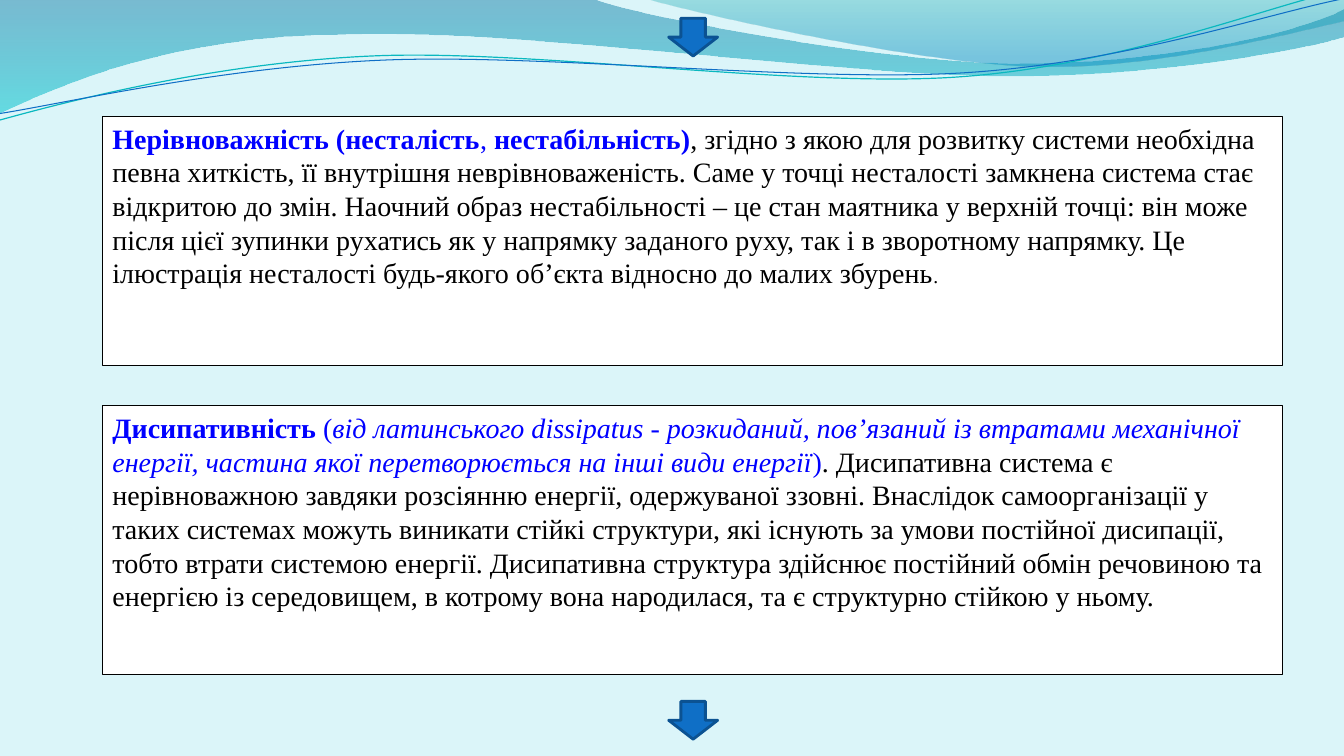
"""Build a slide on two system principles under a wave header."""
from pptx import Presentation, util as u
from pptx.dml.color import RGBColor
from pptx.enum import shapes as s, text as t
from lxml import etree

SKY = RGBColor(0xDB, 0xF5, 0xF9)
WHITE = RGBColor(255, 255, 255)
BLACK = RGBColor(0, 0, 0)
BLUE = RGBColor(0, 0, 255)
ROYAL = RGBColor(0x0F, 0x6F, 0xC6)
NAVY = RGBColor(0x0B, 0x52, 0x92)
AQUA = RGBColor(0x0A, 0xB8, 0xBF)
DEEP = RGBColor(0x00, 0x74, 0xA1)
CYAN = RGBColor(0x00, 0xC6, 0xCF)
TEAL = RGBColor(0x00, 0xA1, 0xA9)
AZURE = RGBColor(0x00, 0x8B, 0xBF)

deck = Presentation()
deck.slide_width, deck.slide_height = u.Pt(960), u.Pt(540)
slide = deck.slides.add_slide(deck.slide_layouts[6])
slide.background.fill.solid()
slide.background.fill.fore_color.rgb = SKY


def draw(start, parts, close):
    """Draw an outline whose parts are points or cubic curves."""
    dots = [(u.Pt(p[i]), u.Pt(p[i + 1]))
            for p in parts for i in range(0, len(p), 2)]
    pen = slide.shapes.build_freeform(u.Pt(start[0]), u.Pt(start[1]))
    pen.add_line_segments(dots, close=close)
    shape = pen.convert_to_shape()
    shape.shadow.inherit = False
    nodes = iter(shape._element.findall(".//{*}lnTo"))
    for part in parts:
        node = next(nodes)
        if len(part) == 6:
            node.tag = node.tag.replace("lnTo", "cubicBezTo")
            for i in range(2):
                extra = next(nodes)
                node.append(extra[0])
                extra.getparent().remove(extra)
    return shape


waves = [
    ((0, -1), [(423, -1), (456, 12, 637, 45, 728, 45),
               (820, 45, 920, 27, 960, 6.5), (961, 26),
               (944, 32, 835, 55, 716, 54), (597, 54, 366, 20, 247, 24.5),
               (123, 25, 44, 60, -1, 81)],
     [(0, DEEP, 45), (1, CYAN, 55)]),
    ((460, -1), [(489, 8, 654, 45, 738, 47), (822, 50, 923, 23, 960, 15),
                 (960, 0)],
     [(0, TEAL, 30), (0.8, AZURE, 45)]),
]
for start, parts, stops in waves:
    wave = draw(start, parts, True)
    wave.line.fill.background()
    wave.fill.gradient()
    wave.fill.gradient_angle = 270
    for stop, (place, color, alpha) in zip(wave.fill.gradient_stops, stops):
        stop.position = place
        stop.color.rgb = color
    nodes = wave._element.spPr.findall(".//{*}srgbClr")
    for node, (place, color, alpha) in zip(nodes, stops):
        tag = node.tag.replace("srgbClr", "alpha")
        etree.SubElement(node, tag).set("val", str(alpha * 1000))

curves = [
    ((-2.6, 63.4), [(45, 52.6, 152.2, 29.6, 266.3, 30),
                    (379.4, 30.3, 567.9, 67.2, 683.1, 64.7),
                    (798.4, 62.1, 902.2, 25.9, 959.8, 15.6)], AQUA, 0.85),
    ((-1.3, 58.4), [(44.2, 53.5, 157.3, 32.8, 272.4, 33.2),
                    (387.5, 33.6, 572.3, 63.4, 687.5, 61.8),
                    (802.7, 60.2, 905.3, 30, 961.7, 21.6)], ROYAL, 0.75),
]
for start, parts, color, width in curves:
    curve = draw(start, parts, False)
    curve.rotation = 357.3
    curve.fill.background()
    curve.line.color.rgb = color
    curve.line.width = u.Pt(width)


def add(kind, box, fill, line, width):
    """Add a filled preset shape."""
    shape = slide.shapes.add_shape(kind, *[u.Pt(n) for n in box])
    shape.shadow.inherit = False
    shape.fill.solid()
    shape.fill.fore_color.rgb = fill
    shape.line.color.rgb = line
    shape.line.width = u.Pt(width)
    return shape


cards = [
    (83, 178, [
        ("Нерівноважність (несталість", BLUE, True, False, 20),
        (", ", BLUE, False, False, 20),
        ("нестабільність)", BLUE, True, False, 20),
        (", згідно з якою для розвитку системи необхідна певна хиткість, "
         "її внутрішня неврівноваженість. Саме у точці несталості замкнена "
         "система стає відкритою до змін. Наочний образ нестабільності – це "
         "стан маятника у верхній точці: він може після цієї зупинки рухатись "
         "як у напрямку заданого руху, так і в зворотному напрямку. Це "
         "ілюстрація несталості будь-якого об’єкта відносно до малих збурень",
         BLACK, False, False, 20),
        (".", BLACK, False, False, 14)]),
    (289.8, 192, [
        ("Дисипативність", BLUE, True, False, 20),
        (" (", BLUE, False, False, 20),
        ("від латинського dissіpatus ‑ розкиданий, пов’язаний із втратами "
         "механічної енергії, частина якої перетворюється на інші види "
         "енергії", BLUE, False, True, 20),
        (")", BLUE, False, False, 20),
        (". Дисипативна система є нерівноважною завдяки розсіянню енергії, "
         "одержуваної ззовні. Внаслідок самоорганізації у таких системах "
         "можуть виникати стійкі структури, які існують за умови постійної "
         "дисипації, тобто втрати системою енергії. Дисипативна структура "
         "здійснює постійний обмін речовиною та енергією із середовищем, в "
         "котрому вона народилася, та є структурно стійкою у ньому.",
         BLACK, False, False, 20)]),
]
for top, height, runs in cards:
    card = add(s.MSO_SHAPE.RECTANGLE, (73.2, top, 842.6, height),
               WHITE, BLACK, 0.75)
    frame = card.text_frame
    frame.word_wrap = True
    frame.vertical_anchor = t.MSO_ANCHOR.TOP
    para = frame.paragraphs[0]
    para.alignment = t.PP_ALIGN.LEFT
    para.font.name = "Times New Roman"
    for words, color, bold, slant, size in runs:
        run = para.add_run()
        run.text = words
        run.font.color.rgb = color
        run.font.bold, run.font.italic = bold, slant
        run.font.size = u.Pt(size)

for top in (13, 501):
    add(s.MSO_SHAPE.DOWN_ARROW, (477.6, top, 35, 27), ROYAL, NAVY, 2)

deck.save("out.pptx")
